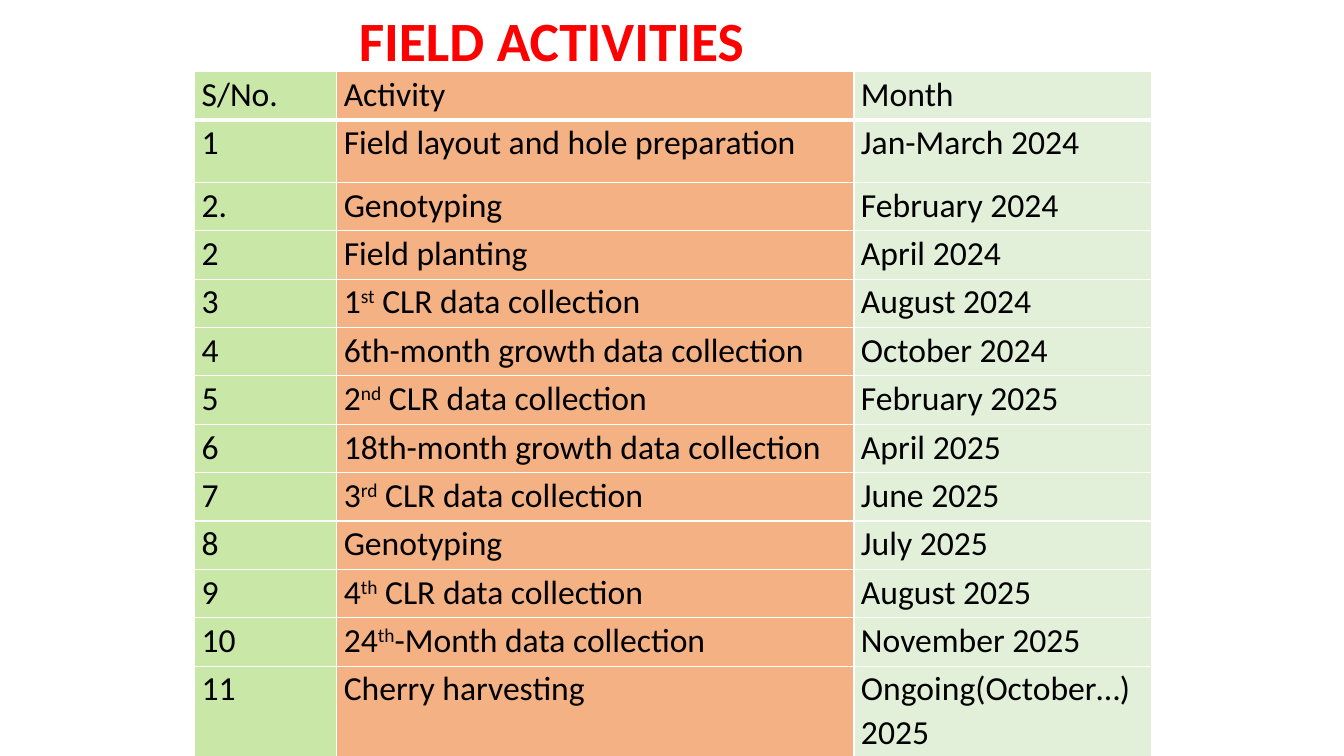
import pptx
import pptx.util
import pptx.dml.color
import pptx.enum.text
import pptx.oxml
import pptx.oxml.ns
import lxml.etree

Inches = pptx.util.Inches
Pt = pptx.util.Pt

WIDTHS = [1.41, 5.13, 2.95]
HEIGHTS = [0.48, 0.62] + [0.48] * 10 + [0.95]
FILLS = ["C9E7A7", "F4B183", "E2F0D9"]
ROWS = [
    ("S/No.", "Activity", "Month"),
    ("1", "Field layout and hole preparation", "Jan-March 2024"),
    ("2.", "Genotyping", "February 2024"),
    ("2", "Field planting", "April 2024"),
    ("3", "1^st^ CLR data collection", "August 2024"),
    ("4", "6th-month growth data collection", "October 2024"),
    ("5", "2^nd^ CLR data collection", "February 2025"),
    ("6", "18th-month growth data collection", "April 2025"),
    ("7", "3^rd^ CLR data collection", "June 2025"),
    ("8", "Genotyping", "July 2025"),
    ("9", "4^th^ CLR data collection", "August 2025"),
    ("10", "24^th^-Month data collection", "November 2025"),
    ("11", "Cherry harvesting", "Ongoing(October…)2025"),
]


def color(code):
    return pptx.dml.color.RGBColor.from_string(code)


def style(para, size, code, space, bold=False):
    para.line_spacing = space
    font = para.font
    font.name = "Calibri"
    font.size = Pt(size)
    font.bold = bold
    font.color.rgb = color(code)


def add_title(slide, text):
    box = slide.shapes.add_textbox(
        Inches(3.46), Inches(0.16), Inches(7.48), Inches(0.55))
    frame = box.text_frame
    frame.word_wrap = True
    frame.vertical_anchor = pptx.enum.text.MSO_ANCHOR.MIDDLE
    para = frame.paragraphs[0]
    para.text = text
    style(para, 39.6, "FF0000", 0.9, True)


def add_edge(cell, side, width):
    qn = pptx.oxml.ns.qn
    props = cell._tc.get_or_add_tcPr()
    edge = lxml.etree.SubElement(props, qn(f"a:ln{side}"), w=str(Pt(width)))
    fill = lxml.etree.SubElement(edge, qn("a:solidFill"))
    lxml.etree.SubElement(fill, qn("a:srgbClr"), val="FFFFFF")


def fill_cell(cell, text, code, bottom):
    cell.margin_left = cell.margin_right = Inches(0.07)
    cell.margin_top = cell.margin_bottom = 0
    para = cell.text_frame.paragraphs[0]
    for index, part in enumerate(text.split("^")):
        run = para.add_run()
        run.text = part
        if index % 2:
            run.font._element.set("baseline", "30000")
    style(para, 24, "000000", 1.07)
    for side, width in zip("LRTB", (1, 1, 1, bottom)):
        add_edge(cell, side, width)
    cell.fill.solid()
    cell.fill.fore_color.rgb = color(code)


def add_plan(slide):
    frame = slide.shapes.add_table(
        len(ROWS), len(WIDTHS), Inches(1.93), Inches(0.71),
        Inches(sum(WIDTHS)), Inches(sum(HEIGHTS)))
    table = frame.table
    table.first_row = False
    table.horz_banding = False
    for column, width in zip(table.columns, WIDTHS):
        column.width = Inches(width)
    for row, height in zip(table.rows, HEIGHTS):
        row.height = Inches(height)
    for r, texts in enumerate(ROWS):
        for c, text in enumerate(texts):
            fill_cell(table.cell(r, c), text, FILLS[c], 1 if r else 3)


def main():
    deck = pptx.Presentation()
    deck.slide_width = Inches(13.33)
    deck.slide_height = Inches(7.5)
    slide = deck.slides.add_slide(deck.slide_layouts[6])
    add_title(slide, "FIELD ACTIVITIES")
    add_plan(slide)
    deck.save("out.pptx")


if __name__ == "__main__":
    main()
